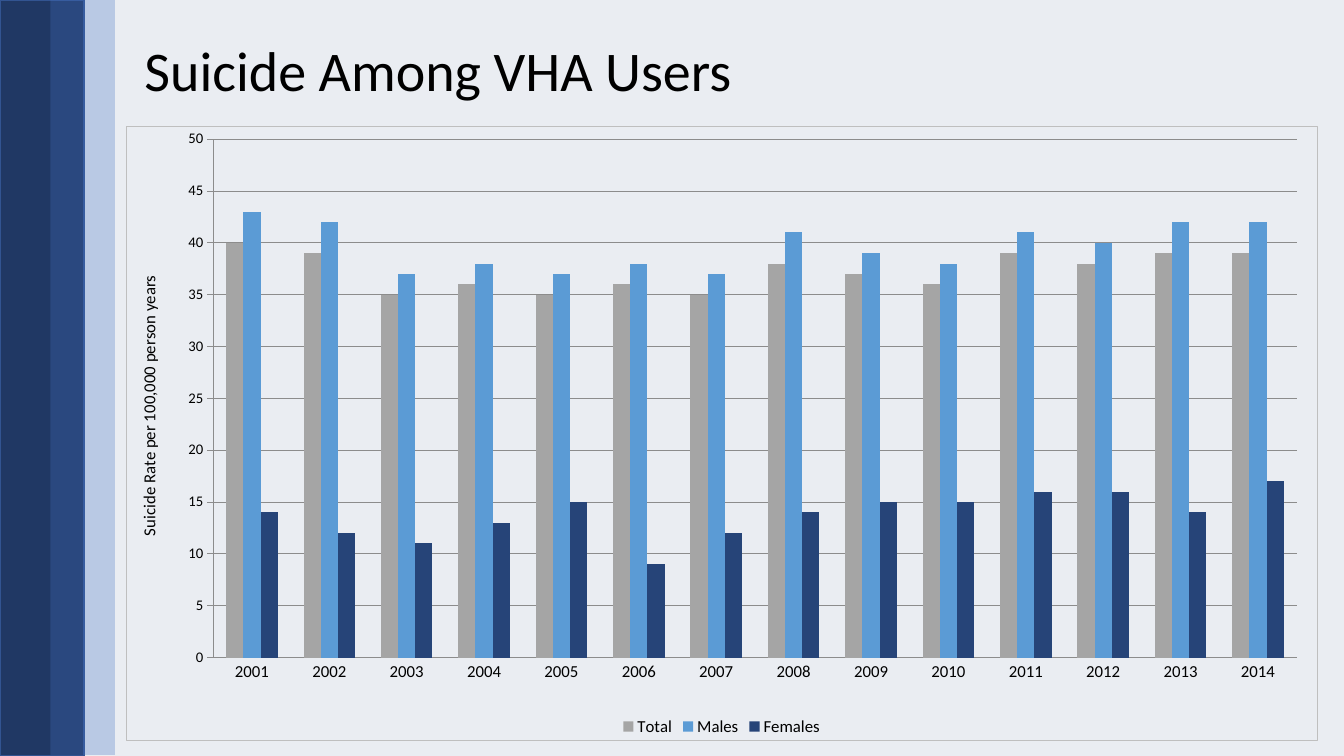
"""Build a slide with a clustered column chart of suicide rates by year."""
from lxml.etree import SubElement
from pptx import Presentation
from pptx.chart.data import CategoryChartData
from pptx.dml.color import RGBColor
from pptx.enum.chart import XL_CHART_TYPE, XL_LEGEND_POSITION, XL_TICK_MARK
from pptx.enum.shapes import MSO_SHAPE
from pptx.enum.text import MSO_ANCHOR
from pptx.oxml import parse_xml
from pptx.oxml.ns import nsdecls, qn
from pptx.util import Pt

BLACK = RGBColor(0, 0, 0)
PAPER = RGBColor(0xEA, 0xED, 0xF2)
NAVY = RGBColor(0x20, 0x38, 0x64)
EDGE = RGBColor(0x32, 0x54, 0x91)
BLUE = RGBColor(0x44, 0x72, 0xC4)
GREY = RGBColor(0x8C, 0x8C, 0x8C)
FRAME = RGBColor(0xBF, 0xBF, 0xBF)

TITLE = "Suicide Among VHA Users"
LABEL = "Suicide Rate per 100,000 person years"
YEARS = [str(year) for year in range(2001, 2015)]
RATES = [
    ("Total", RGBColor(0xA5, 0xA5, 0xA5),
     (40, 39, 35, 36, 35, 36, 35, 38, 37, 36, 39, 38, 39, 39)),
    ("Males", RGBColor(0x5B, 0x9B, 0xD5),
     (43, 42, 37, 38, 37, 38, 37, 41, 39, 38, 41, 40, 42, 42)),
    ("Females", RGBColor(0x26, 0x44, 0x78),
     (14, 12, 11, 13, 15, 9, 12, 14, 15, 15, 16, 16, 14, 17)),
]
PLOT = {"x": 0.073, "y": 0.021, "w": 0.91, "h": 0.844}
WIDTH, HEIGHT = 960, 540


def style(font, size, color=BLACK, name="Calibri"):
    font.size, font.name, font.bold = Pt(size), name, False
    font.color.rgb = color


def write(frame, text, size=12, space=None):
    frame.text = text
    para = frame.paragraphs[0]
    para.line_spacing = space
    style(para.runs[0].font, size)


def rule(line, color=GREY, width=0.5):
    line.color.rgb = color
    line.width = Pt(width)


def add_band(group, left, top, width, color):
    band = group.shapes.add_shape(
        MSO_SHAPE.RECTANGLE, Pt(left), Pt(top), Pt(width), Pt(HEIGHT))
    band.shadow.inherit = False
    band.fill.solid()
    band.fill.fore_color.rgb = color
    band.line.fill.background()
    return band


def add_rates(slide):
    data = CategoryChartData(number_format="0")
    data.categories = YEARS
    for name, _, values in RATES:
        data.add_series(name, values)
    chart = slide.shapes.add_chart(
        XL_CHART_TYPE.COLUMN_CLUSTERED, Pt(90), Pt(90), Pt(851), Pt(439.2),
        data).chart
    style(chart.font, 10)
    chart.has_title = False
    chart.has_legend = True
    chart.legend.position = XL_LEGEND_POSITION.BOTTOM
    chart.legend.include_in_layout = False
    style(chart.legend.font, 12)
    plot = chart.plots[0]
    plot.gap_width, plot.overlap, plot.vary_by_categories = 150, 0, False
    for series, (_, color, _) in zip(plot.series, RATES):
        series.invert_if_negative = False
        series.format.fill.solid()
        series.format.fill.fore_color.rgb = color
    return chart


def set_axes(chart):
    years, rates = chart.category_axis, chart.value_axis
    for axis, size, tick in ((years, 12, XL_TICK_MARK.NONE),
                             (rates, 10.5, XL_TICK_MARK.CROSS)):
        style(axis.tick_labels.font, size)
        rule(axis.format.line)
        axis.major_tick_mark = tick
        axis.minor_tick_mark = XL_TICK_MARK.NONE
    rates.minimum_scale, rates.maximum_scale, rates.major_unit = 0, 50, 5
    rates.tick_labels.number_format = "0"
    rates.tick_labels.number_format_is_linked = False
    rates.has_major_gridlines = True
    rule(rates.major_gridlines.format.line)
    write(rates.axis_title.text_frame, LABEL)


def set_frame(chart):
    area = chart.element.find(qn("c:chart"))
    area.addnext(parse_xml(
        f'<c:spPr {nsdecls("c", "a")}><a:noFill/><a:ln w="{Pt(0.5)}">'
        f'<a:solidFill><a:srgbClr val="{FRAME}"/></a:solidFill></a:ln></c:spPr>'))
    plot = area.find(qn("c:plotArea"))
    old = plot.find(qn("c:layout"))
    if old is not None:
        plot.remove(old)
    parts = [("layoutTarget", "inner"), ("xMode", "edge"), ("yMode", "edge")]
    parts += PLOT.items()
    body = "".join(f'<c:{tag} val="{val}"/>' for tag, val in parts)
    plot.insert(0, parse_xml(
        f'<c:layout {nsdecls("c")}><c:manualLayout>{body}'
        '</c:manualLayout></c:layout>'))


def main():
    deck = Presentation()
    deck.slide_width, deck.slide_height = Pt(WIDTH), Pt(HEIGHT)
    slide = deck.slides.add_slide(deck.slide_layouts[5])
    slide.background.fill.solid()
    slide.background.fill.fore_color.rgb = PAPER

    title = slide.shapes.title
    title.left, title.top, title.width, title.height = (
        Pt(96), Pt(0), Pt(828), Pt(104.4))
    write(title.text_frame, TITLE, size=40, space=0.9)
    title.text_frame.vertical_anchor = MSO_ANCHOR.MIDDLE
    title.text_frame.paragraphs[0].alignment = 1

    chart = add_rates(slide)
    set_axes(chart)
    set_frame(chart)

    side = slide.shapes.add_group_shape()
    rule(add_band(side, 0, 0, 60, NAVY).line, EDGE, 1)
    veil = add_band(side, 36, -0.7, 46, BLUE)
    tint = veil.fill._xPr.find(qn("a:solidFill"))[0]
    SubElement(tint, qn("a:alpha")).set("val", "29000")
    deck.save("out.pptx")


if __name__ == "__main__":
    main()
